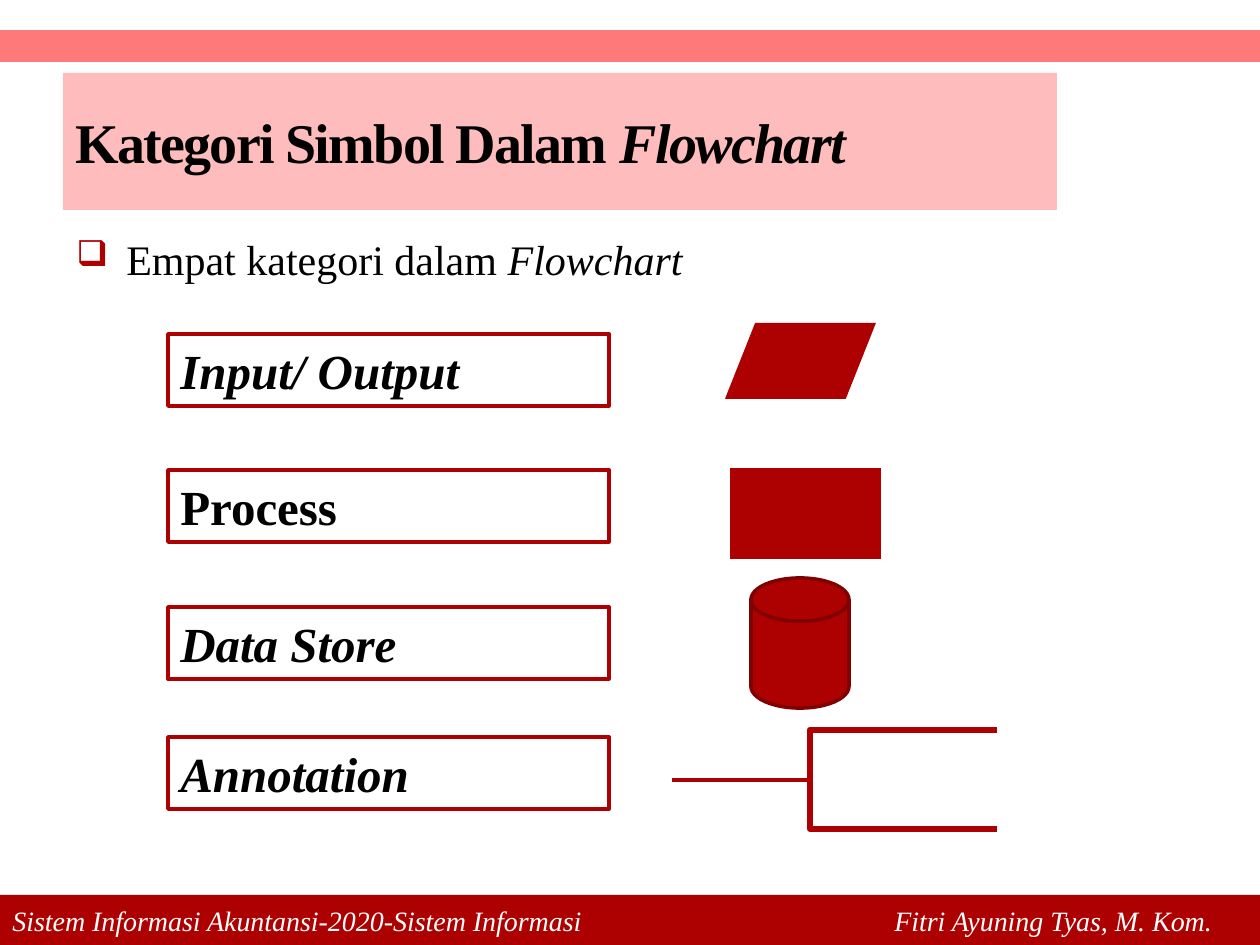
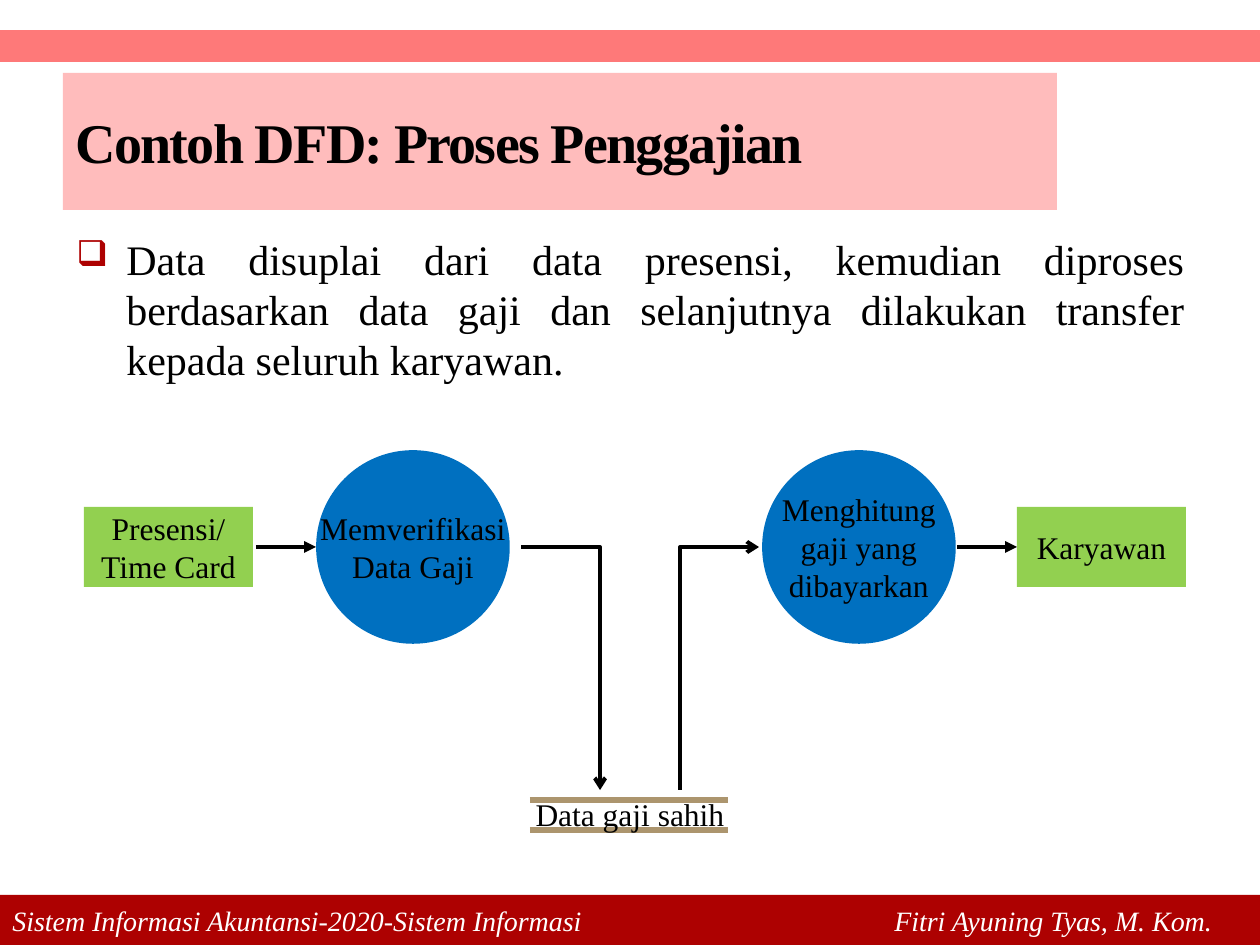
from lxml import etree
from pptx import Presentation, util as u
from pptx.dml.color import RGBColor
from pptx.enum import shapes, text
from pptx.oxml.ns import qn

PX = 914400 / 126
RED, BAND, TITLE_PINK = "AD0101", "FE7979", "FFBCBC"
DARK_RED, BLUE, GREEN, TAN = "800101", "0070C0", "92D050", "AC956E"
WHITE, BLACK = "FFFFFF", "000000"
Shape, Line = shapes.MSO_SHAPE, shapes.MSO_CONNECTOR
Align, Anchor = text.PP_ALIGN, text.MSO_ANCHOR

presentation = Presentation()
presentation.slide_width = u.Emu(int(1260 * PX))
presentation.slide_height = u.Emu(int(945 * PX))


def px(*lengths):
    return [u.Emu(round(length * PX)) for length in lengths]


def rgb(color):
    return RGBColor.from_string(color)


def add_box(slide, kind, place, fill=None, line=None, width=2.08):
    shape = slide.shapes.add_shape(kind, *px(*place))
    shape.shadow.inherit = False
    if fill:
        shape.fill.solid()
        shape.fill.fore_color.rgb = rgb(fill)
    else:
        shape.fill.background()
    if line:
        shape.line.color.rgb = rgb(line)
        shape.line.width = u.Pt(width)
    else:
        shape.line.fill.background()
    return shape


def write(shape, lines, size=18, color=BLACK, bold=False, italic=False, align=Align.LEFT,
          anchor=Anchor.MIDDLE, wrap=True, spacing=0, bullet=None, tab=None):
    """Fill a shape with lines of text; each line is a list of (words, italic) or a string."""
    frame = shape.text_frame
    frame.word_wrap, frame.vertical_anchor = wrap, anchor
    for number, line in enumerate(lines):
        paragraph = frame.paragraphs[0] if number == 0 else frame.add_paragraph()
        paragraph.alignment = align
        properties = paragraph._p.get_or_add_pPr()
        if bullet:
            indent = px(50)[0]
            properties.set("marL", str(indent))
            properties.set("indent", str(-indent))
            bullet_color = etree.SubElement(properties, qn("a:buClr"))
            etree.SubElement(bullet_color, qn("a:srgbClr"), val=RED)
            etree.SubElement(properties, qn("a:buSzPct"), val="85000")
            etree.SubElement(properties, qn("a:buChar"), char=bullet)
        if tab:
            tabs = etree.SubElement(properties, qn("a:tabLst"))
            etree.SubElement(tabs, qn("a:tab"), pos=str(px(tab)[0]), algn="l")
        for words, slanted in [(line, italic)] if isinstance(line, str) else line:
            run = paragraph.add_run()
            run.text = words
            run.font.name, run.font.size = "Times New Roman", u.Pt(size)
            run.font.bold, run.font.italic = bold, slanted
            run.font.color.rgb = rgb(color)
            if spacing:
                run._r.get_or_add_rPr().set("spc", str(spacing))


def add_line(slide, start, end, color=BLACK, width=2.25, kind=Line.STRAIGHT, **arrowheads):
    """Draw a connector; arrowheads are headEnd or tailEnd with an arrow type."""
    connector = slide.shapes.add_connector(kind, *px(*start, *end))
    connector.line.color.rgb = rgb(color)
    connector.line.width = u.Pt(width)
    for name, arrow in arrowheads.items():
        etree.SubElement(connector.line._get_or_add_ln(), qn("a:" + name), type=arrow)
    etree.SubElement(connector._element.spPr, qn("a:effectLst"))
    return connector


def add_slide(title, body):
    slide = presentation.slides.add_slide(presentation.slide_layouts[6])
    add_box(slide, Shape.RECTANGLE, (0, 30, 1260, 32), BAND)
    footer = add_box(slide, Shape.RECTANGLE, (0, 895, 1260, 50), RED)
    write(footer, ["Sistem Informasi Akuntansi-2020-Sistem Informasi\tFitri Ayuning Tyas, M. Kom."],
          size=16, color=WHITE, italic=True, tab=882)
    heading = add_box(slide, Shape.RECTANGLE, (63, 73, 994, 137), TITLE_PINK)
    write(heading, [title], size=32, bold=True, spacing=-100)
    content = slide.shapes.add_textbox(*px(64, 227, 1133, 665))
    write(content, [body], size=24, align=Align.JUSTIFY, anchor=Anchor.TOP, bullet="❑")
    return slide


# Flowchart symbol categories
slide = add_slide([("Kategori Simbol Dalam ", False), ("Flowchart", True)],
                  [("Empat kategori dalam ", False), ("Flowchart", True)])
categories = [("Input/ Output", 334, True), ("Process", 470, False),
              ("Data Store", 607, True), ("Annotation", 737, True)]
for name, top, italic in categories:
    label = add_box(slide, Shape.RECTANGLE, (168, top, 441, 72), WHITE, RED)
    write(label, [name], size=28, bold=True, italic=italic)

add_box(slide, Shape.FLOWCHART_DATA, (725, 323, 151, 76), RED)
add_box(slide, Shape.FLOWCHART_PROCESS, (730, 468, 151, 91), RED)
add_box(slide, Shape.FLOWCHART_MAGNETIC_DISK, (751, 578, 98, 130), RED, DARK_RED)

add_line(slide, (809, 780), (672, 780), RED)
outline = slide.shapes.build_freeform(997, 730, scale=PX)
outline.add_line_segments([(810, 730), (810, 829), (997, 829)], close=False)
bracket = outline.convert_to_shape()
bracket.shadow.inherit = False
bracket.fill.background()
bracket.line.color.rgb = rgb(RED)
bracket.line.width = u.Pt(3.5)

# Payroll data flow diagram
slide = add_slide("Contoh DFD: Proses Penggajian",
                  "Data disuplai dari data presensi, kemudian diproses berdasarkan data gaji "
                  "dan selanjutnya dilakukan transfer kepada seluruh karyawan.")
entities = []
for left, lines in [(84, ["Presensi/", "Time Card"]), (1017, ["Karyawan"])]:
    entity = add_box(slide, Shape.RECTANGLE, (left, 507, 169, 80), GREEN)
    write(entity, lines, align=Align.CENTER)
    entities.append(entity)
for left, lines in [(318, ["Memverifikasi", "Data Gaji"]),
                    (764, ["Menghitung", "gaji yang", "dibayarkan"])]:
    process = add_box(slide, Shape.OVAL, (left, 452, 190, 190), BLUE, BLUE)
    write(process, lines, align=Align.CENTER, wrap=False)

add_line(slide, (256, 547), (316, 547), tailEnd="triangle")
to_employee = add_line(slide, (957, 547), (1017, 547), tailEnd="triangle")
to_employee.end_connect(entities[1], 1)

for y in (800, 830):
    add_line(slide, (530, y), (728, y), TAN, 3)
store = slide.shapes.add_textbox(*px(522, 789, 216, 50))
write(store, ["Data gaji sahih"], align=Align.CENTER, anchor=Anchor.TOP, wrap=False)

to_store = add_line(slide, (521, 547), (600, 790), kind=Line.ELBOW, tailEnd="arrow")
from_store = add_line(slide, (759, 547), (680, 790), kind=Line.ELBOW, headEnd="arrow")
for elbow in (to_store, from_store):
    elbow._element.spPr.find(qn("a:prstGeom")).set("prst", "bentConnector2")

presentation.save("out.pptx")
